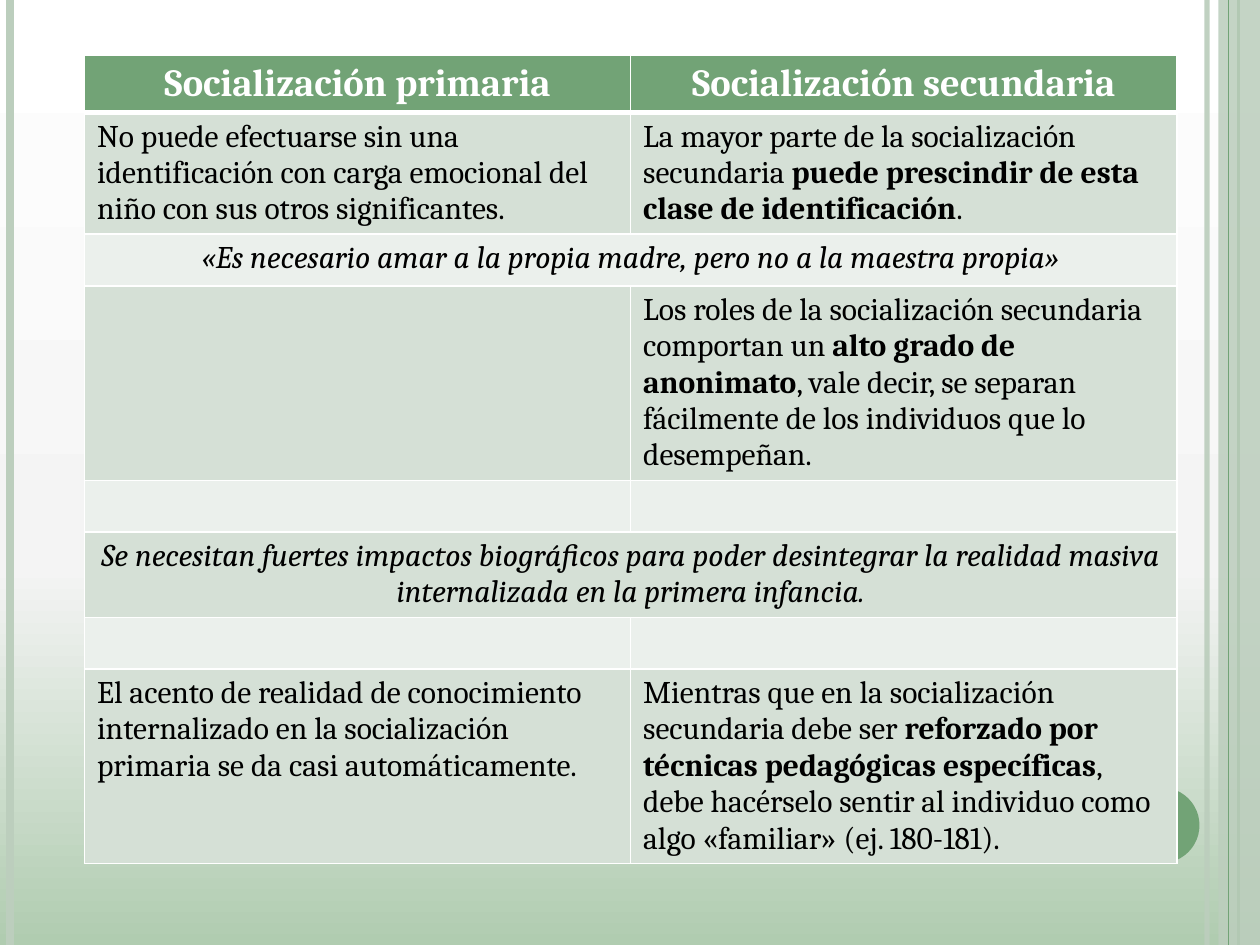
import pptx
import pptx.dml.color
import pptx.enum.shapes
import pptx.enum.text
import pptx.oxml
import pptx.oxml.ns
import pptx.util
from dataclasses import dataclass
from lxml import etree

Inches = pptx.util.Inches
Pt = pptx.util.Pt
qn = pptx.oxml.ns.qn
SHAPES = pptx.enum.shapes.MSO_SHAPE
CENTER = pptx.enum.text.PP_ALIGN.CENTER


@dataclass(frozen=True)
class Theme:
    font: str = "Cambria"
    head_size: int = 22
    body_size: int = 18
    green: str = "72A376"
    pale: str = "BCCEBD"
    band_dark: str = "D5E0D6"
    band_light: str = "EBF0EC"
    white: str = "FFFFFF"
    black: str = "000000"
    background: tuple = ((0, "B0CCB0"), (40, "F4F4F4"), (100, "FFFFFF"))


def rgb(color):
    return pptx.dml.color.RGBColor.from_string(color)


def sub(parent, tag, **attrs):
    return etree.SubElement(parent, qn(tag), {k: str(v) for k, v in attrs.items()})


def set_opacity(shape, percent):
    for color in shape._element.spPr.iter(qn("a:srgbClr")):
        sub(color, "a:alpha", val=percent * 1000)


def write_text(tf, text, *, font, size, color, bold=False, italic=False, align=None):
    """Fill the frame; a part between asterisks is bold."""
    p = tf.paragraphs[0]
    p.alignment = align
    for i, part in enumerate(text.split("*")):
        if not part:
            continue
        r = p.add_run()
        r.text = part
        r.font.name = font
        r.font.size = Pt(size)
        r.font.color.rgb = rgb(color)
        r.font.bold = bold or i % 2 == 1
        r.font.italic = italic


class SlideBuilder:
    def __init__(self, prs, theme):
        self.theme = theme
        self.height = prs.slide_height
        self.s = prs.slides.add_slide(prs.slide_layouts[6])

    def background(self):
        fill = self.s.background.fill
        fill.gradient()
        fill.gradient_angle = 90
        stops = next(self.s._element.iter(qn("a:gsLst")))
        for stop in list(stops):
            stops.remove(stop)
        for position, color in self.theme.background:
            sub(sub(stops, "a:gs", pos=position * 1000), "a:srgbClr", val=color)

    def vertical_line(self, x, color, width, opacity=100):
        line = self.s.shapes.add_connector(
            pptx.enum.shapes.MSO_CONNECTOR.STRAIGHT, Inches(x), 0, Inches(x), self.height)
        line.line.color.rgb = rgb(color)
        line.line.width = Pt(width)
        sub(line._element.spPr, "a:effectLst")
        if opacity < 100:
            set_opacity(line, opacity)

    def shape(self, kind, x, y, w, h, color, opacity=100):
        sp = self.s.shapes.add_shape(kind, Inches(x), Inches(y), Inches(w), Inches(h))
        sp.shadow.inherit = False
        sp.fill.solid()
        sp.fill.fore_color.rgb = rgb(color)
        sp.line.fill.background()
        if opacity < 100:
            set_opacity(sp, opacity)

    def cell(self, cell, fill, top=1, bottom=1):
        borders = {"a:lnL": 1, "a:lnR": 1, "a:lnT": top, "a:lnB": bottom}
        for tag, width in borders.items():
            ln = sub(cell._tc.get_or_add_tcPr(), tag, w=Pt(width))
            sub(sub(ln, "a:solidFill"), "a:srgbClr", val=self.theme.white)
        cell.fill.solid()
        cell.fill.fore_color.rgb = rgb(fill)

    def table(self, rows, x, y, width, row_height):
        """Draw the rows; a row with a single text spans both columns."""
        t = self.theme
        table = self.s.shapes.add_table(
            len(rows), 2, Inches(x), Inches(y), Inches(width),
            Inches(row_height * len(rows))).table
        table.horz_banding = False
        for i, texts in enumerate(rows):
            head, spans = i == 0, len(texts) == 1
            fill = t.green if head else t.band_dark if i % 2 else t.band_light
            for j in range(2):
                self.cell(table.cell(i, j), fill,
                          top=3 if i == 1 else 1, bottom=3 if head else 1)
            if spans:
                table.cell(i, 0).merge(table.cell(i, 1))
            for j, text in enumerate(texts):
                write_text(table.cell(i, j).text_frame, text, font=t.font,
                           size=t.head_size if head else t.body_size,
                           color=t.white if head else t.black, bold=head,
                           italic=spans, align=CENTER if head or spans else None)


ROWS = [
    ("Socialización primaria", "Socialización secundaria"),
    ("No puede efectuarse sin una identificación con carga emocional del niño "
     "con sus otros significantes.",
     "La mayor parte de la socialización secundaria "
     "*puede prescindir de esta clase de identificación*."),
    ("«Es necesario amar a la propia madre, pero no a la maestra propia»",),
    ("", "Los roles de la socialización secundaria comportan un *alto grado de "
     "anonimato*, vale decir, se separan fácilmente de los individuos que lo "
     "desempeñan."),
    ("", ""),
    ("Se necesitan fuertes impactos biográficos para poder desintegrar la "
     "realidad masiva internalizada en la primera infancia.",),
    ("", ""),
    ("El acento de realidad de conocimiento internalizado en la socialización "
     "primaria se da casi automáticamente.",
     "Mientras que en la socialización secundaria debe ser *reforzado por "
     "técnicas pedagógicas específicas*, debe hacérselo sentir al individuo "
     "como algo «familiar» (ej. 180-181)."),
]


def main():
    prs = pptx.Presentation()
    prs.slide_width, prs.slide_height = Inches(10), Inches(7.5)
    theme = Theme()
    slide = SlideBuilder(prs, theme)
    slide.background()
    slide.vertical_line(9.58, theme.pale, 3, opacity=93)
    slide.vertical_line(0.08, theme.pale, 4.5)
    slide.vertical_line(9.83, theme.green, 1.5)
    slide.shape(SHAPES.RECTANGLE, 9.67, 0, 0.33, 7.5, theme.pale, opacity=87)
    slide.vertical_line(9.75, theme.green, 0.75)
    slide.shape(SHAPES.OVAL, 8.92, 6.25, 0.6, 0.6, theme.green)
    slide.table(ROWS, 0.67, 0.44, 8.67, 0.41)
    prs.save("out.pptx")


if __name__ == "__main__":
    main()
